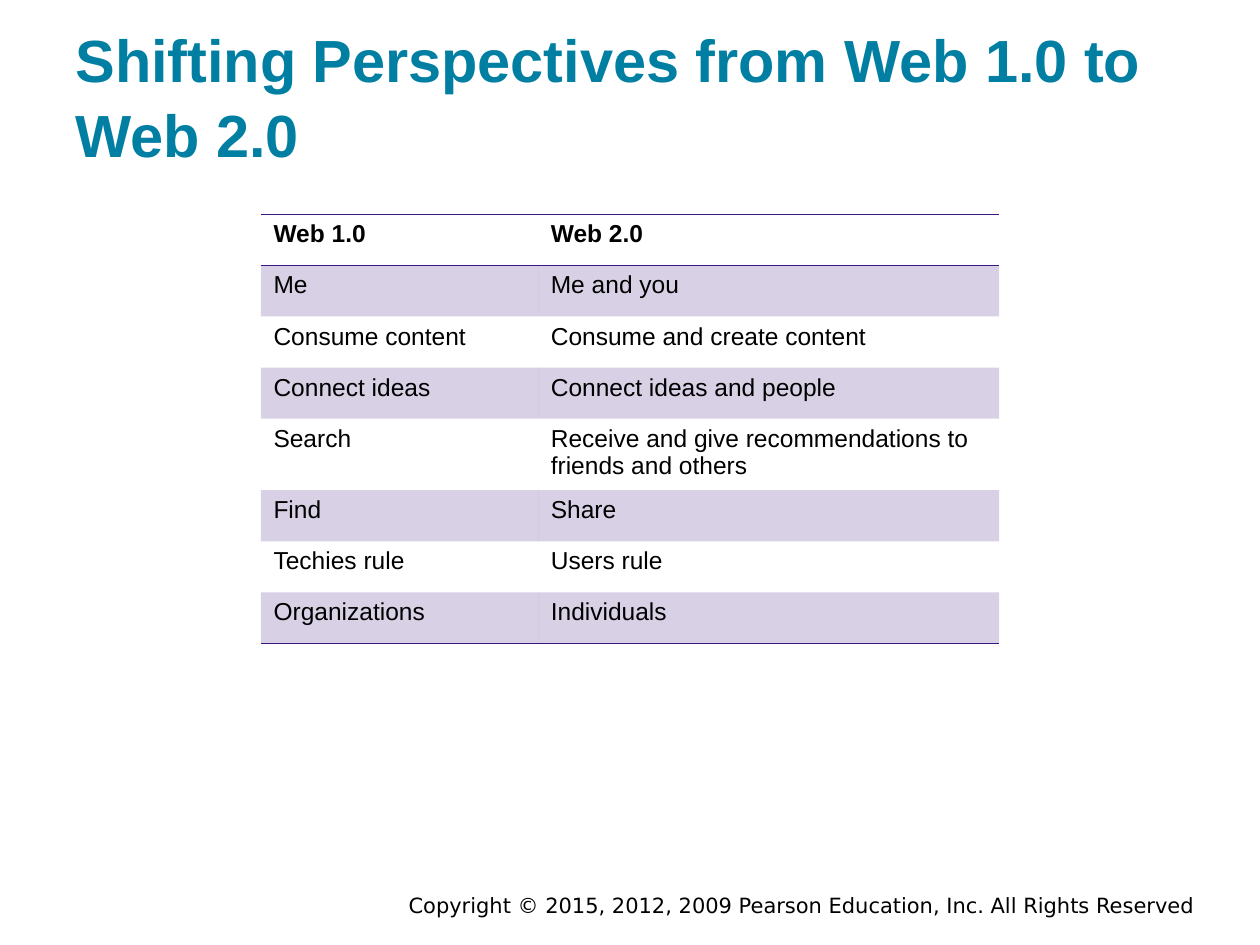
import pptx
import pptx.dml.color
import pptx.enum.text
import pptx.oxml
import pptx.oxml.ns
import pptx.util
from pptx.util import Cm, Pt

COLORS = {"title": "007FA3", "text": "000000", "accent": "3C1581"}
NO_STYLE = "{2D5ABB26-0587-4C30-8999-92F81FD0307C}"
ROWS = [
    ("Web 1.0", "Web 2.0"),
    ("Me", "Me and you"),
    ("Consume content", "Consume and create content"),
    ("Connect ideas", "Connect ideas and people"),
    ("Search", "Receive and give recommendations to friends and others"),
    ("Find", "Share"),
    ("Techies rule", "Users rule"),
    ("Organizations", "Individuals"),
]
COLUMN_WIDTHS = (Cm(5.59), Cm(9.29))
ROW_HEIGHT = Cm(1.03)


def rgb(name):
    return pptx.dml.color.RGBColor.from_string(COLORS[name])


def format_runs(tf, size, font="Arial", color="text", bold=False):
    for p in tf.paragraphs:
        for r in p.runs:
            r.font.size = Pt(size)
            r.font.name = font
            r.font.bold = bold
            r.font.color.rgb = rgb(color)


def set_margins(tf, side, vertical):
    tf.margin_left = tf.margin_right = side
    tf.margin_top = tf.margin_bottom = vertical


def add_title(s, text):
    sp = s.shapes.title
    sp.left, sp.top, sp.width, sp.height = Cm(1.27), Cm(0.61), Cm(22.86), Cm(3.05)
    tf = sp.text_frame
    tf.text = text
    tf.word_wrap = True
    tf.auto_size = pptx.enum.text.MSO_AUTO_SIZE.NONE
    tf.vertical_anchor = pptx.enum.text.MSO_ANCHOR.BOTTOM
    set_margins(tf, Cm(0.25), Cm(0.25))
    p = tf.paragraphs[0]
    p.alignment = pptx.enum.text.PP_ALIGN.LEFT
    p.line_spacing = 1.05
    format_runs(tf, 34, color="title", bold=True)


def add_copyright(s, text):
    sp = s.shapes.add_textbox(Cm(4.45), Cm(17.86), Cm(19.89), Cm(0.56))
    tf = sp.text_frame
    tf.text = text
    tf.word_wrap = True
    set_margins(tf, Cm(0.25), Cm(0.13))
    tf.paragraphs[0].alignment = pptx.enum.text.PP_ALIGN.RIGHT
    format_runs(tf, 12, font="DejaVu Sans")


def add_borders(cell, sides):
    """Draw accent rules on the given sides, listed in schema order (T, B)."""
    tcPr = cell._tc.get_or_add_tcPr()
    for i, side in enumerate(sides):
        tcPr.insert(i, pptx.oxml.parse_xml(
            f'<a:ln{side} {pptx.oxml.ns.nsdecls("a")} w="{Pt(1)}"><a:solidFill>'
            f'<a:srgbClr val="{COLORS["accent"]}"/></a:solidFill></a:ln{side}>'))


def fill_cell(cell, shaded):
    if not shaded:
        cell.fill.background()
        return
    cell.fill.solid()
    cell.fill.fore_color.rgb = rgb("accent")
    color = cell._tc.tcPr.find(".//" + pptx.oxml.ns.qn("a:srgbClr"))
    color.append(pptx.oxml.parse_xml(
        f'<a:alpha {pptx.oxml.ns.nsdecls("a")} val="20000"/>'))


def add_comparison_table(s):
    frame = s.shapes.add_table(len(ROWS), len(COLUMN_WIDTHS), Cm(5.26), Cm(4.32),
                               sum(COLUMN_WIDTHS), ROW_HEIGHT * len(ROWS))
    table = frame.table
    table._tbl.tblPr.find(pptx.oxml.ns.qn("a:tableStyleId")).text = NO_STYLE
    for column, width in zip(table.columns, COLUMN_WIDTHS):
        column.width = width
    borders = {0: "TB", len(ROWS) - 1: "B"}
    for i, texts in enumerate(ROWS):
        table.rows[i].height = ROW_HEIGHT
        for j, text in enumerate(texts):
            cell = table.cell(i, j)
            cell.text = text
            format_runs(cell.text_frame, 14, bold=i == 0)
            fill_cell(cell, shaded=i % 2 == 1)
            add_borders(cell, borders.get(i, ""))


def main():
    prs = pptx.Presentation()
    prs.slide_width, prs.slide_height = Cm(25.4), Cm(19.05)
    s = prs.slides.add_slide(prs.slide_layouts[5])
    add_copyright(s, "Copyright © 2015, 2012, 2009 Pearson Education, Inc. All Rights Reserved")
    add_title(s, "Shifting Perspectives from Web 1.0 to Web 2.0")
    add_comparison_table(s)
    prs.save("out.pptx")


if __name__ == "__main__":
    main()
